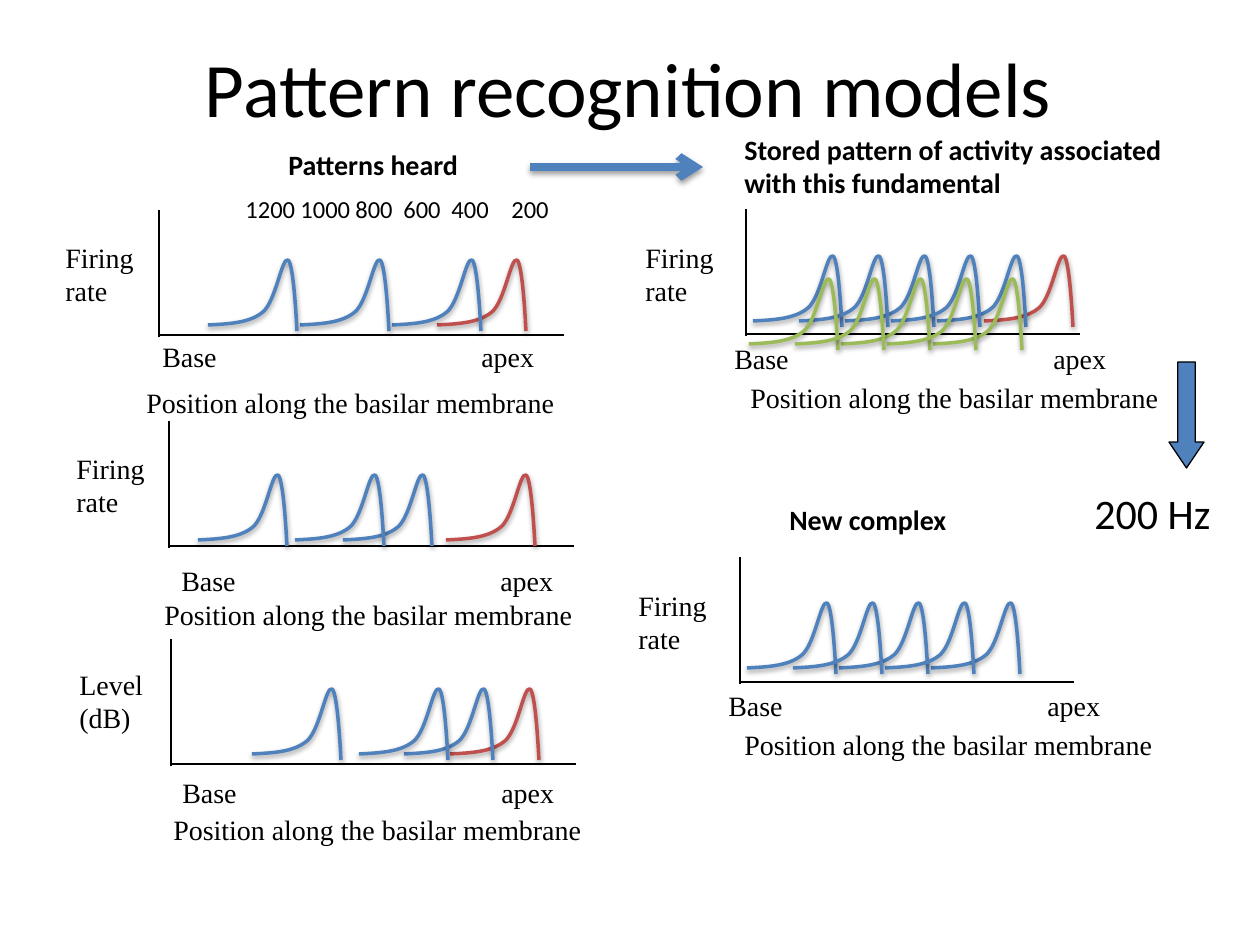
from lxml.etree import SubElement
from pptx import Presentation
from pptx.dml.color import RGBColor
from pptx.enum.shapes import MSO_CONNECTOR, MSO_SHAPE
from pptx.enum.text import MSO_ANCHOR, PP_ALIGN
from pptx.oxml.ns import qn
from pptx.util import Pt

PX = 914400 / 126
SERIF, SANS = "Times New Roman", "Calibri"
COLORS = {"black": "000000", "blue": "4F81BD", "red": "C0504D", "green": "9BBB59"}

TITLE = "Pattern recognition models"
X_ENDS, X_TITLE = "Base\tapex", "Position along the basilar membrane"
APEX_TAB = 319
AXIS_HEIGHT, BASELINE_DROP = 127, 125
LABEL_HEIGHT, TWO_LINE_HEIGHT = 47, 81

# Staggered drawing order of five evenly spaced peaks
STEP = 46
STAGGER = (4, 2, 0, 3, 1)

# axis: left, top, length; the other places are left, top of each label;
# peaks: colour, top, lefts
PANELS = [
    {"axis": (159, 210, 405), "y_label": ("Firing rate", 53, 234),
     "ends": (150, 333), "x_title": (134, 379),
     "peaks": [("red", 257, [437]), ("blue", 257, [392, 300, 208])]},
    {"axis": (169, 421, 405), "y_label": ("Firing\nrate", 64, 445),
     "ends": (169, 557), "x_title": (152, 591),
     "peaks": [("red", 472, [446]), ("blue", 472, [198, 343, 295])]},
    {"axis": (171, 639, 405), "y_label": ("Level\n(dB)", 67, 661),
     "ends": (170, 769), "x_title": (161, 806),
     "peaks": [("red", 686, [450]), ("blue", 686, [404, 359, 252])]},
    {"axis": (746, 209, 334), "y_label": ("Firing rate", 633, 234),
     "ends": (722, 335), "x_title": (738, 374),
     "peaks": [("red", 253, [984]),
               ("blue", 253, [753 + STEP * i for i in STAGGER]),
               ("green", 276, [749 + STEP * i for i in STAGGER])]},
    {"axis": (740, 557, 334), "y_label": ("Firing rate", 626, 582),
     "ends": (716, 682), "x_title": (732, 721),
     "peaks": [("blue", 600, [747 + STEP * i for i in STAGGER])]},
]

# text, (left, top, width, height), size, bold
CAPTIONS = [
    ("Patterns heard", (276, 141, 198, 47), 16, True),
    ("Stored pattern of activity associated\nwith this fundamental",
     (732, 126, 450, 81), 16, True),
    ("New complex", (777, 496, 184, 47), 16, True),
    ("200 Hz", (1082, 481, 147, 63), 24, False),
]
FREQUENCIES = "1200\t1000\t800\t600\t400\t200"
FREQUENCY_BOX = (233, 188, 358, 47)
FREQUENCY_TABS = (55, 110, 158, 206, 266)

# One firing peak: a start, then three points for each cubic curve
# (slow rise, steep rise, sharp drop)
PEAK = [(0, 68),
        (21, 67), (42, 66), (55, 55),
        (68, 44), (74, 0), (80, 3),
        (86, 6), (89, 74), (89, 74)]


def emu(*lengths):
    return [round(length * PX) for length in lengths]


def rgb(name):
    return RGBColor.from_string(COLORS[name])


def set_effects(shape, shadow):
    """Replace the theme's shadow by none or by a soft one below."""
    effects = SubElement(shape._element.spPr, qn("a:effectLst"))
    if shadow:
        outer = SubElement(effects, qn("a:outerShdw"), blurRad="40000", dist="20000",
                           dir="5400000", rotWithShape="0")
        color = SubElement(outer, qn("a:srgbClr"), val=COLORS["black"])
        SubElement(color, qn("a:alpha"), val="38000")


def add_line(page, start, end, color="black", width=0.75, shadow=False):
    line = page.shapes.add_connector(MSO_CONNECTOR.STRAIGHT, *emu(*start, *end))
    line.line.color.rgb = rgb(color)
    line.line.width = Pt(width)
    set_effects(line, shadow)
    return line


def add_text(page, text, place, size=16, font=SERIF, bold=False, wrap=False, tabs=()):
    box = page.shapes.add_textbox(*emu(*place))
    frame = box.text_frame
    frame.word_wrap = wrap
    frame.text = text
    for para in frame.paragraphs:
        para.font.name, para.font.size, para.font.bold = font, Pt(size), bold
        para.font.color.rgb = rgb("black")
        if tabs:
            properties = para._p.get_or_add_pPr()
            stops = properties.makeelement(qn("a:tabLst"))
            properties.insert(0, stops)
            for tab in tabs:
                SubElement(stops, qn("a:tab"), pos=str(emu(tab)[0]), algn="l")


def curve_segments(shape):
    """Turn each three straight segments of a freeform into one cubic curve."""
    outline = next(shape._element.iter(qn("a:path")))
    segments = outline.findall(qn("a:lnTo"))
    for first in range(0, len(segments), 3):
        curve = SubElement(outline, qn("a:cubicBezTo"))
        for segment in segments[first:first + 3]:
            curve.append(segment[0])
            outline.remove(segment)


def add_peak(page, color, left, top):
    points = [tuple(emu(left + x, top + y)) for x, y in PEAK]
    builder = page.shapes.build_freeform(*points[0])
    builder.add_line_segments(points[1:], close=False)
    peak = builder.convert_to_shape()
    curve_segments(peak)
    peak.fill.background()
    peak.line.color.rgb = rgb(color)
    peak.line.width = Pt(2)
    set_effects(peak, shadow=True)


def add_panel(page, panel):
    left, top, length = panel["axis"]
    base = top + BASELINE_DROP
    add_line(page, (left, top), (left, top + AXIS_HEIGHT))
    add_line(page, (left, base), (left + length, base))
    label, x, y = panel["y_label"]
    add_text(page, label, (x, y, 105, TWO_LINE_HEIGHT), wrap=True)
    add_text(page, X_ENDS, (*panel["ends"], 402, LABEL_HEIGHT), tabs=[APEX_TAB])
    add_text(page, X_TITLE, (*panel["x_title"], 438, LABEL_HEIGHT))
    for color, peak_top, lefts in panel["peaks"]:
        for peak_left in lefts:
            add_peak(page, color, peak_left, peak_top)


def add_title(page):
    title = page.shapes.title
    title.left, title.top, title.width, title.height = emu(93, 23, 1071, 127)
    title.text_frame.text = TITLE
    title.text_frame.vertical_anchor = MSO_ANCHOR.MIDDLE
    para = title.text_frame.paragraphs[0]
    para.alignment = PP_ALIGN.CENTER
    para.font.name, para.font.size = SANS, Pt(44)
    para.font.color.rgb = rgb("black")


def add_arrows(page):
    across = add_line(page, (530, 167), (703, 167), "blue", 4.5, shadow=True)
    outline = across._element.spPr.find(qn("a:ln"))
    SubElement(outline, qn("a:tailEnd"), type="arrow")
    down = page.shapes.add_shape(MSO_SHAPE.DOWN_ARROW, *emu(1169, 362, 35, 106))
    down.adjustments[0], down.adjustments[1] = 0.5, 0.74
    down.shadow.inherit = False
    down.fill.solid()
    down.fill.fore_color.rgb = rgb("blue")
    down.line.color.rgb = rgb("black")
    down.line.width = Pt(0.75)


def main():
    deck = Presentation()
    deck.slide_width, deck.slide_height = emu(1260, 945)
    page = deck.slides.add_slide(deck.slide_layouts[5])
    add_title(page)
    for panel in PANELS:
        add_panel(page, panel)
    add_text(page, FREQUENCIES, FREQUENCY_BOX, 14, SANS, wrap=True, tabs=FREQUENCY_TABS)
    for text, place, size, bold in CAPTIONS:
        add_text(page, text, place, size, SANS, bold)
    add_arrows(page)
    deck.save("out.pptx")


if __name__ == "__main__":
    main()
